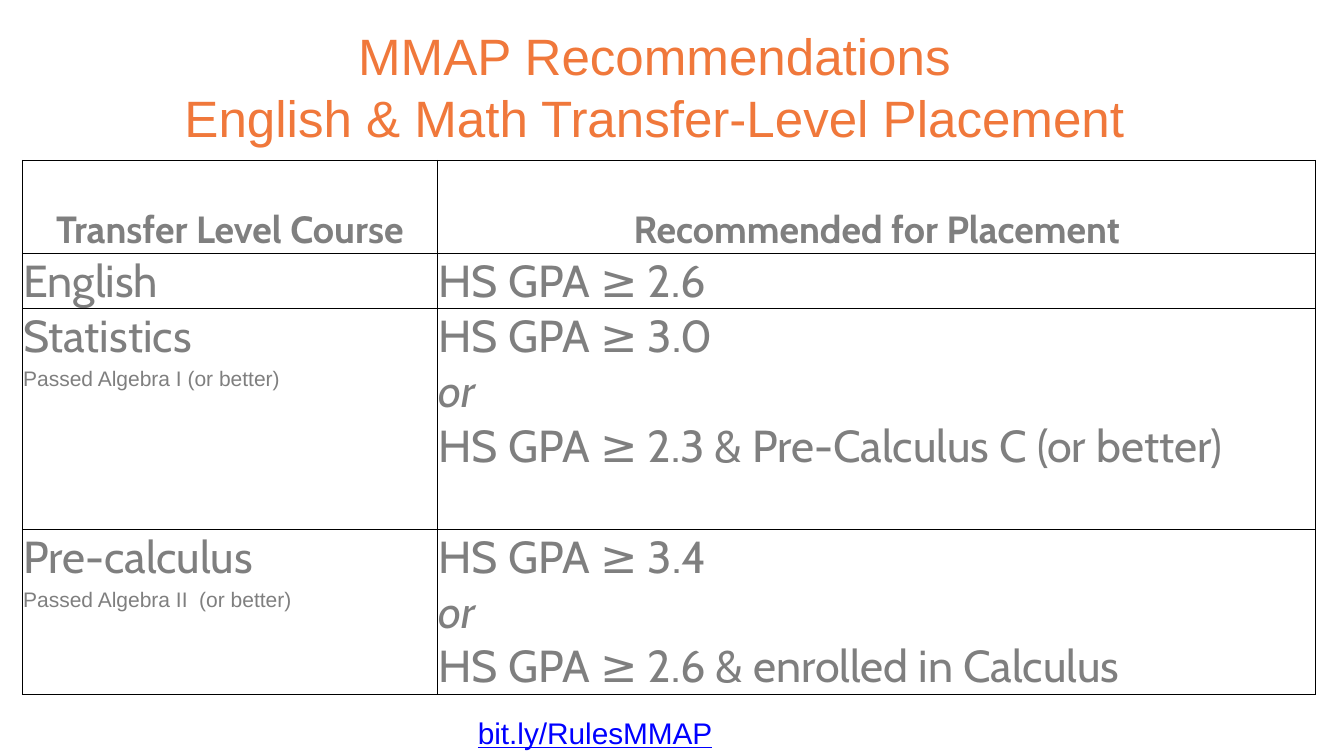
from lxml import etree
from pptx import Presentation
from pptx.dml.color import RGBColor
from pptx.enum.text import MSO_ANCHOR, MSO_AUTO_SIZE, PP_ALIGN
from pptx.oxml.ns import qn
from pptx.util import Inches, Pt

TITLE_ONLY = 5
CENTER, LEFT = PP_ALIGN.CENTER, PP_ALIGN.LEFT
TOP, MIDDLE, BOTTOM = MSO_ANCHOR.TOP, MSO_ANCHOR.MIDDLE, MSO_ANCHOR.BOTTOM
NO_AUTOFIT = MSO_AUTO_SIZE.NONE

COLORS = {"title": "F0783B", "body": "7F7F7F", "link": "0000FF", "border": "000000"}

# Each style: font, size, colour, alignment, line spacing, other font settings
STYLES = {
    "title": ("Arial", 36.5, "title", CENTER, 1.0, {}),
    "header": ("Cabin", 27, "body", CENTER, 1.0, {"bold": True}),
    "body": ("Cabin", 32, "body", LEFT, 1.0, {"bold": False}),
    "or": ("Cabin", 32, "body", LEFT, 1.0, {"bold": False, "italic": True}),
    "note": ("Arial", 15, "body", LEFT, 1.15, {"bold": False}),
    "link": ("Arial", 21.3, "link", LEFT, 1.0, {"underline": True}),
}

COLUMN_WIDTHS = [4.12, 8.71]
# Each row: height, anchor, cells as lists of (text, style)
PLACEMENT_ROWS = [
    (0.92, BOTTOM, [[("Transfer Level Course", "header")],
                    [("Recommended for Placement", "header")]]),
    (0.55, BOTTOM, [[("English", "body")], [("HS GPA ≥ 2.6", "body")]]),
    (2.19, TOP, [[("Statistics", "body"), ("Passed Algebra I (or better)", "note")],
                 [("HS GPA ≥ 3.0", "body"), ("or", "or"),
                  ("HS GPA ≥ 2.3 & Pre-Calculus C (or better)", "body")]]),
    (1.64, TOP, [[("Pre-calculus", "body"), ("Passed Algebra II  (or better)", "note")],
                 [("HS GPA ≥ 3.4", "body"), ("or", "or"),
                  ("HS GPA ≥ 2.6 & enrolled in Calculus", "body")]]),
]


def write_lines(text_frame, lines):
    """Fill the frame with one styled paragraph per (text, style) pair."""
    text_frame.text = "\n".join(text for text, style in lines)
    for paragraph, (text, style) in zip(text_frame.paragraphs, lines):
        name, size, color, alignment, spacing, settings = STYLES[style]
        paragraph.alignment = alignment
        paragraph.line_spacing = spacing
        font = paragraph.runs[0].font
        font.name = name
        font.size = Pt(size)
        font.color.rgb = RGBColor.from_string(COLORS[color])
        for setting, value in settings.items():
            setattr(font, setting, value)


def add_title(slide, lines):
    title = slide.shapes.title
    title.left, title.top = Inches(0.24), Inches(0.46)
    title.width, title.height = Inches(12.5), Inches(0.79)
    text_frame = title.text_frame
    text_frame.auto_size = NO_AUTOFIT
    text_frame.vertical_anchor = MIDDLE
    text_frame.margin_left = text_frame.margin_right = Inches(0.13)
    text_frame.margin_top = text_frame.margin_bottom = Inches(0.07)
    write_lines(text_frame, [(line, "title") for line in lines])


def add_borders(cell):
    properties = cell._tc.get_or_add_tcPr()
    for position, side in enumerate(("a:lnL", "a:lnR", "a:lnT", "a:lnB")):
        line = etree.Element(qn(side), w=str(Pt(0.75)))
        fill = etree.SubElement(line, qn("a:solidFill"))
        etree.SubElement(fill, qn("a:srgbClr"), val=COLORS["border"])
        properties.insert(position, line)


def add_placement_table(slide):
    heights = [height for height, anchor, cells in PLACEMENT_ROWS]
    table = slide.shapes.add_table(
        len(heights), len(COLUMN_WIDTHS), Inches(0.22), Inches(1.59),
        Inches(sum(COLUMN_WIDTHS)), Inches(sum(heights))).table
    table.horz_banding = False
    for column, width in zip(table.columns, COLUMN_WIDTHS):
        column.width = Inches(width)
    for row, (height, anchor, contents) in zip(table.rows, PLACEMENT_ROWS):
        row.height = Inches(height)
        for cell, lines in zip(row.cells, contents):
            cell.fill.background()
            cell.vertical_anchor = anchor
            cell.margin_left = cell.margin_right = cell.margin_top = Inches(0.01)
            cell.margin_bottom = Inches(0)
            add_borders(cell)
            write_lines(cell.text_frame, lines)


def add_link_text(slide, text):
    box = slide.shapes.add_textbox(Inches(4.64), Inches(7.04), Inches(2.99), Inches(0.46))
    box.text_frame.word_wrap = True
    write_lines(box.text_frame, [(text, "link")])


def main():
    presentation = Presentation()
    presentation.slide_width = Inches(13.33)
    presentation.slide_height = Inches(7.5)
    slide = presentation.slides.add_slide(presentation.slide_layouts[TITLE_ONLY])
    add_title(slide, ["MMAP Recommendations", "English & Math Transfer-Level Placement"])
    add_placement_table(slide)
    add_link_text(slide, "bit.ly/RulesMMAP")
    presentation.save("out.pptx")


if __name__ == "__main__":
    main()
